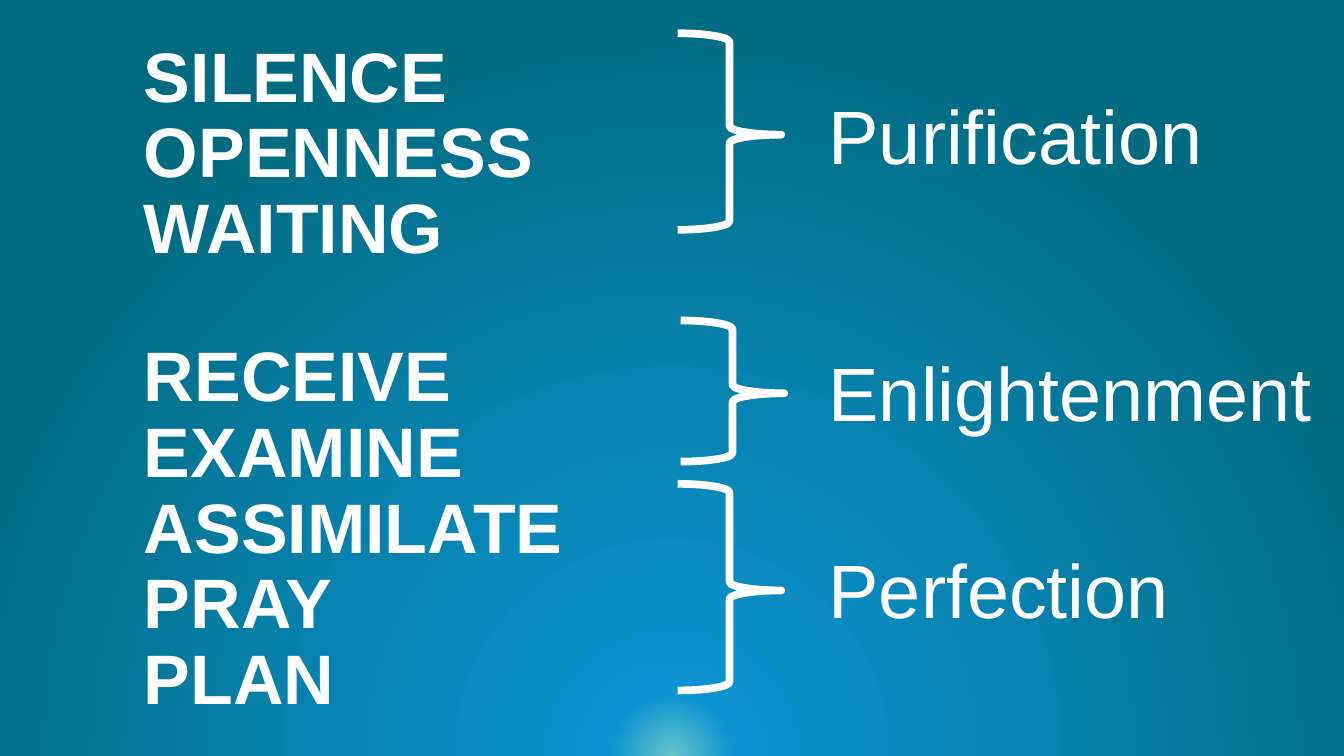
"""Build the slide that groups eight steps of prayer into three stages."""
from lxml import etree
from pptx import Presentation
from pptx.dml.color import RGBColor
from pptx.enum.shapes import MSO_SHAPE
from pptx.oxml import parse_xml
from pptx.oxml.ns import nsdecls
from pptx.util import Inches, Pt

WIDE, HIGH = 13.33, 7.5
WHITE = "FFFFFF"
GROUPS = [
    ["SILENCE", "OPENNESS", "WAITING"],
    ["RECEIVE", "EXAMINE", "ASSIMILATE", "PRAY", "PLAN"],
]
STEP_GAP, GROUP_GAP = 6, 58
STAGES = [
    ("Purification", 0.83, 4.06, (6.72, 0.33, 1.95)),
    ("Enlightenment", 3.38, 5.21, (6.75, 3.18, 1.4)),
    ("Perfection", 5.34, 3.86, (6.72, 4.8, 2.05)),
]
STAGE_LEFT, STAGE_HIGH, BRACE_WIDE = 8.12, 1.01, 1.03
STOPS = [(0, "66C6C8"), (8, "0C93D1"), (100, "006B80")]


def color(code):
    return RGBColor.from_string(code)


def add_box(slide, *area):
    frame = slide.shapes.add_textbox(*map(Inches, area)).text_frame
    frame.word_wrap = True
    return frame


def add_run(para, text, size, bold=False):
    run = para.add_run()
    run.text = text
    run.font.name = "Arial"
    run.font.size = Pt(size)
    run.font.bold = bold
    run.font.color.rgb = color(WHITE)


def add_brace(slide, left, top, high):
    area = map(Inches, (left, top, BRACE_WIDE, high))
    brace = slide.shapes.add_shape(MSO_SHAPE.RIGHT_BRACE, *area)
    brace.shadow.inherit = False
    brace.adjustments[0] = 0.083
    brace.adjustments[1] = 0.516
    brace.fill.background()
    brace.line.color.rgb = color(WHITE)
    brace.line.width = Pt(5.5)


def paint_back(slide):
    slide.background.fill.solid()
    solid = next(slide.element.iter("{*}solidFill"))
    grad = parse_xml(f'<a:gradFill {nsdecls("a")} rotWithShape="1"><a:gsLst/>'
                     '<a:path path="circle"><a:fillToRect l="50000" t="130000"'
                     ' r="50000" b="-30000"/></a:path></a:gradFill>')
    space = "{" + grad.nsmap["a"] + "}"
    for share, code in STOPS:
        stop = etree.SubElement(grad[0], space + "gs", pos=str(share * 1000))
        etree.SubElement(stop, space + "srgbClr", val=code)
    solid.getparent().replace(solid, grad)


def add_steps(slide):
    frame = add_box(slide, 1.33, 0.43, 8.47, 6.55)
    for row, group in enumerate(GROUPS):
        for col, step in enumerate(group):
            first = row == col == 0
            para = frame.paragraphs[0] if first else frame.add_paragraph()
            para.line_spacing = 0.8
            if not first:
                para.space_before = Pt(STEP_GAP if col else GROUP_GAP)
            add_run(para, step, 50, True)


def main():
    deck = Presentation()
    deck.slide_width, deck.slide_height = Inches(WIDE), Inches(HIGH)
    slide = deck.slides.add_slide(deck.slide_layouts[6])
    paint_back(slide)
    add_steps(slide)
    for name, top, wide, brace in STAGES:
        add_brace(slide, *brace)
        frame = add_box(slide, STAGE_LEFT, top, wide, STAGE_HIGH)
        add_run(frame.paragraphs[0], name, 54)
    deck.save("out.pptx")


if __name__ == "__main__":
    main()
